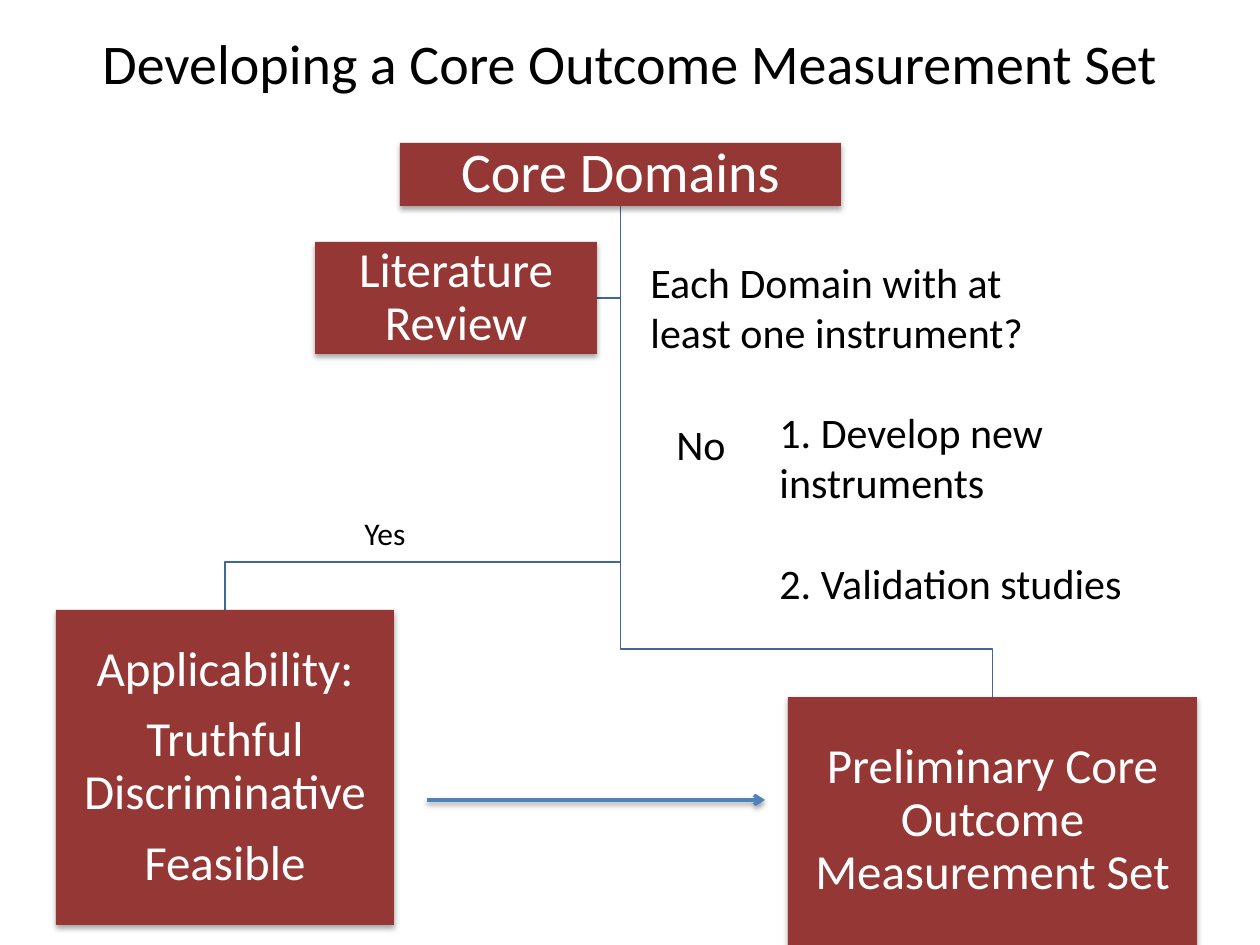
from lxml.etree import SubElement
from pptx import Presentation
from pptx.dml.color import RGBColor
from pptx.enum.shapes import MSO_CONNECTOR as Connector, MSO_SHAPE as Shape
from pptx.enum.text import MSO_ANCHOR as Anchor, MSO_AUTO_SIZE as AutoSize, PP_ALIGN as Align
from pptx.oxml.ns import qn
from pptx.util import Emu, Pt

# Content: lengths in px, 126 to the inch
COLORS = {"box": "953735", "branch": "3F6797", "arrow": "4F81BD",
          "dark": "000000", "light": "FFFFFF"}
FONT = "Calibri"
TITLE = ("Developing a Core Outcome Measurement Set", (63, 6, 1134, 112), 32)
BOXES = {
    "domains": (["Core Domains"], (400, 143, 441, 63), 32),
    "applicability": (["Applicability:", "Truthful Discriminative", "Feasible"],
                      (56, 610, 338, 315), 28),
    "measurement": (["Preliminary Core Outcome Measurement Set"], (788, 697, 409, 248), 28),
    "review": (["Literature Review"], (315, 242, 282, 112), 28),
}
NOTES = [
    (["Each Domain with at least one instrument?"], (638, 250, 450, 114), 24),
    (["1. Develop new instruments", "2. Validation studies"], (767, 400, 420, 217), 24),
    (["No"], (664, 412, 103, 63), 24),
    (["Yes"], (352, 508, 135, 50), 18),
]
BRANCH_DROP = 48  # from the bend of a branch down to its box
ARROW = ((427, 800), (765, 800))


def px(length):
    return Emu(round(length * 914400 / 126))


def rgb(name):
    return RGBColor.from_string(COLORS[name])


def style(paragraph, size, color, align):
    paragraph.alignment = align
    paragraph.font.name = FONT
    paragraph.font.size = Pt(size)
    paragraph.font.color.rgb = rgb(color)


def write(frame, lines, size, color, align, gap, spacing=None):
    frame.word_wrap = True
    frame.text = "\n".join(lines)
    for paragraph in frame.paragraphs:
        style(paragraph, size, color, align)
        paragraph.line_spacing = spacing
    for paragraph in frame.paragraphs[1:]:
        paragraph.space_before = Pt(gap)


def add_shadow(effects, distance, alpha):
    shadow = SubElement(effects, qn("a:outerShdw"), blurRad="40000", dist=str(distance),
                        dir="5400000", rotWithShape="0")
    shade = SubElement(shadow, qn("a:srgbClr"), val=COLORS["dark"])
    SubElement(shade, qn("a:alpha"), val=str(alpha))


def add_branch(shapes, points):
    builder = shapes.build_freeform(px(points[0][0]), px(points[0][1]))
    builder.add_line_segments([(px(x), px(y)) for x, y in points[1:]], close=False)
    branch = builder.convert_to_shape()
    branch.fill.background()
    branch.line.color.rgb = rgb("branch")
    branch.line.width = Pt(0.75)
    branch.shadow.inherit = False


def add_box(shapes, lines, place, size):
    box = shapes.add_shape(Shape.RECTANGLE, *map(px, place))
    box.fill.solid()
    box.fill.fore_color.rgb = rgb("box")
    box.line.fill.background()
    box.shadow.inherit = False
    add_shadow(box._element.spPr.find(qn("a:effectLst")), 23000, 35000)
    frame = box.text_frame
    frame.margin_left = frame.margin_right = frame.margin_top = frame.margin_bottom = px(2)
    frame.vertical_anchor = Anchor.MIDDLE
    write(frame, lines, size, "light", Align.CENTER, 10, 0.9)


def main():
    prs = Presentation()
    prs.slide_width, prs.slide_height = px(1260), px(945)
    slide = prs.slides.add_slide(prs.slide_layouts[5])
    shapes = slide.shapes

    # Title
    text, place, size = TITLE
    title = shapes.title
    title.left, title.top, title.width, title.height = map(px, place)
    title.text_frame.text = text
    title.text_frame.vertical_anchor = Anchor.MIDDLE
    style(title.text_frame.paragraphs[0], size, "dark", Align.CENTER)

    # Branches from the core domains
    left, top, width, height = BOXES["domains"][1]
    trunk, start = left + width / 2, top + height
    left, top, width, height = BOXES["review"][1]
    middle = top + height / 2
    add_branch(shapes, [(trunk, start), (trunk, middle), (left + width, middle)])
    for target in ("measurement", "applicability"):
        left, top, width, _ = BOXES[target][1]
        center, bend = left + width / 2, top - BRANCH_DROP
        add_branch(shapes, [(trunk, start), (trunk, bend), (center, bend), (center, top)])

    # Boxes
    for lines, place, size in BOXES.values():
        add_box(shapes, lines, place, size)

    # Notes beside the branches
    for lines, place, size in NOTES:
        frame = shapes.add_textbox(*map(px, place)).text_frame
        write(frame, lines, size, "dark", Align.LEFT, 29)
        frame.auto_size = AutoSize.SHAPE_TO_FIT_TEXT

    # Arrow to the preliminary set
    (x1, y1), (x2, y2) = ARROW
    arrow = shapes.add_connector(Connector.STRAIGHT, px(x1), px(y1), px(x2), px(y2))
    arrow.line.color.rgb = rgb("arrow")
    arrow.line.width = Pt(2)
    properties = arrow._element.spPr
    SubElement(properties.find(qn("a:ln")), qn("a:tailEnd"), type="arrow")
    add_shadow(SubElement(properties, qn("a:effectLst")), 20000, 38000)

    prs.save("out.pptx")


if __name__ == "__main__":
    main()
